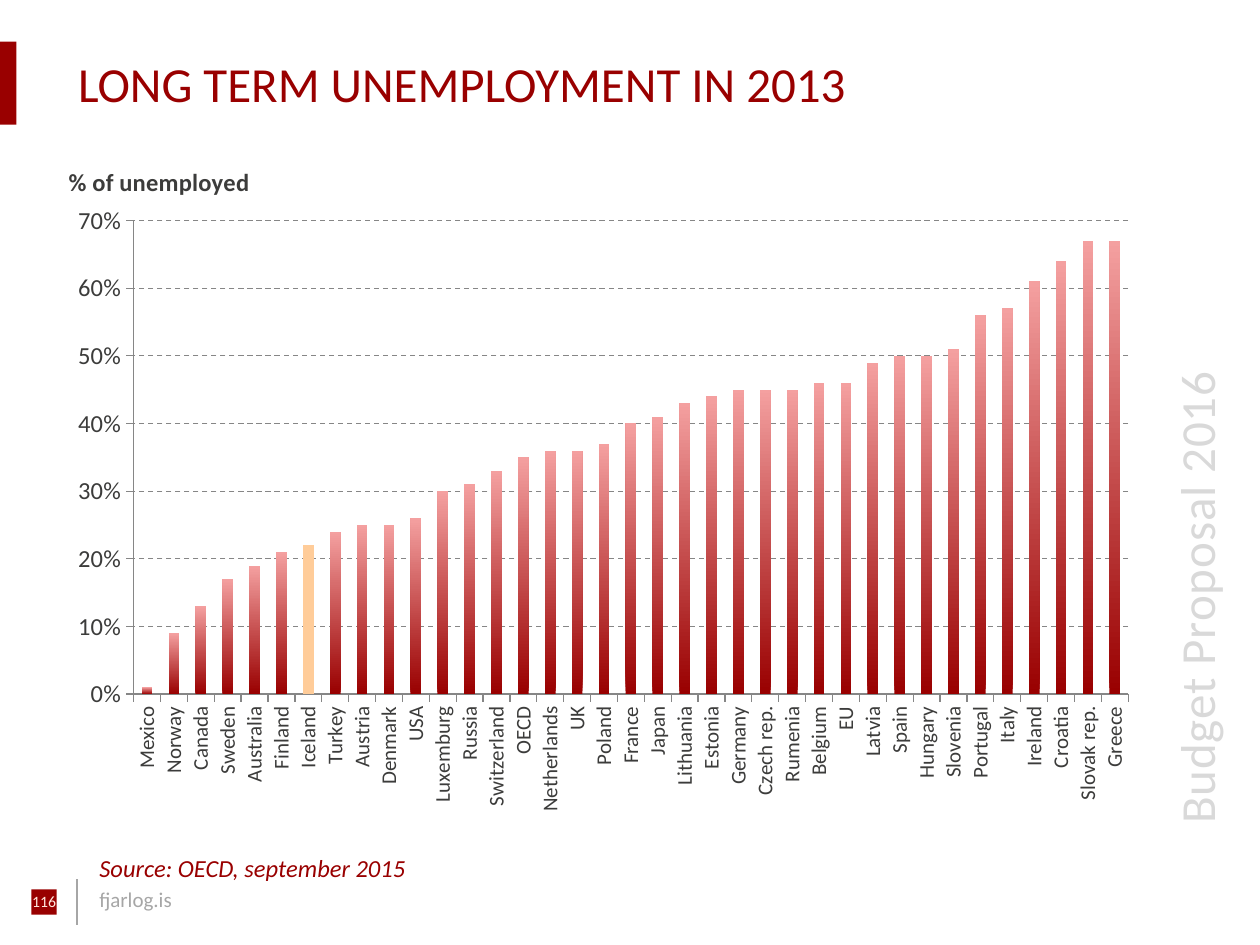
"""Build the long term unemployment slide on a grid of 100 by 75 cells."""
from lxml import etree
from pptx import Presentation
from pptx import util as u
from pptx.chart.data import CategoryChartData
from pptx.dml.color import RGBColor
from pptx.enum import chart as ch, dml, shapes, text
from pptx.oxml.ns import qn

RED, GREY, INK = "990000", "A6A6A6", "3C3C3B"
hue = RGBColor.from_string


def place(node, **vals):
    lay = node.find(qn("c:layout"))
    if lay is None:
        lay = etree.Element(qn("c:layout"))
        node.insert(0, lay)
    man = etree.SubElement(lay, qn("c:manualLayout"))
    for key, val in vals.items():
        etree.SubElement(man, qn("c:" + key)).set("val", str(val))


deck = Presentation()
deck.slide_width, deck.slide_height = u.Inches(10), u.Inches(7.5)
cell = deck.slide_width / 100
page = deck.slides.add_slide(deck.slide_layouts[6])

for spot in [(2.5, 70.6, 2, 2), (0, 3.3, 1.3, 6.6)]:
    bar = page.shapes.add_shape(shapes.MSO_SHAPE.RECTANGLE, *[int(n * cell) for n in spot])
    bar.shadow.inherit = False
    bar.fill.solid()
    bar.fill.fore_color.rgb = hue(RED)
    bar.line.fill.background()

rule = page.shapes.add_connector(
    shapes.MSO_CONNECTOR.STRAIGHT, *[int(n * cell) for n in (6.1, 69.8, 6.1, 73.4)])
rule.line.color.rgb = hue(GREY)
rule.line.width = u.Pt(1)
etree.SubElement(rule._element.spPr, qn("a:effectLst"))

pad = dict(margin_left=u.Inches(0.12), margin_right=u.Inches(0.12),
           margin_top=u.Inches(0.06), margin_bottom=u.Inches(0.06))
mid = dict(pad, vertical_anchor=text.MSO_ANCHOR.MIDDLE)
notes = [
    ("Budget Proposal 2016", (67.8, 36.4, 54.2, 5.7), 28, "D9D9D9", {}),
    ("fjarlog.is", (6.9, 69.9, 18.7, 3), 12, GREY, {}),
    ("LONG TERM UNEMPLOYMENT IN 2013", (5, 3.3, 90.6, 6.6), 28, RED, mid),
    ("116", (0, 70.2, 7, 4.7), 9, "FFE6DC", pad),
    ("Source: OECD, september 2015", (6.9, 67.2, 49.3, 3.4), 14, RED, {}),
]
made = {}
for words, spot, size, tint, form in notes:
    box = page.shapes.add_textbox(*[int(n * cell) for n in spot])
    for key, val in dict(form, word_wrap=True).items():
        setattr(box.text_frame, key, val)
    para = box.text_frame.paragraphs[0]
    run = para.add_run()
    run.text = words
    for key, val in dict(name="Calibri", size=u.Pt(size)).items():
        setattr(run.font, key, val)
    run.font.color.rgb = hue(tint)
    made[words[:6]] = box, para, run
made["Budget"][0].rotation = 270
made["Budget"][2].font._element.set("spc", "50")
made["116"][1].alignment = text.PP_ALIGN.CENTER
made["Source"][2].font.italic = True

rates = {
    "Mexico": 1, "Norway": 9, "Canada": 13, "Sweden": 17, "Australia": 19,
    "Finland": 21, "Iceland": 22, "Turkey": 24, "Austria": 25, "Denmark": 25,
    "USA": 26, "Luxemburg": 30, "Russia": 31, "Switzerland": 33, "OECD": 35,
    "Netherlands": 36, "UK": 36, "Poland": 37, "France": 40, "Japan": 41,
    "Lithuania": 43, "Estonia": 44, "Germany": 45, "Czech rep.": 45,
    "Rumenia": 45, "Belgium": 46, "EU": 46, "Latvia": 49, "Spain": 50,
    "Hungary": 50, "Slovenia": 51, "Portugal": 56, "Italy": 57, "Ireland": 61,
    "Croatia": 64, "Slovak rep.": 67, "Greece": 67,
}
data = CategoryChartData(number_format="0%")
data.categories = list(rates)
data.add_series("Series 1", [rate / 100 for rate in rates.values()])
chart = page.shapes.add_chart(
    ch.XL_CHART_TYPE.COLUMN_CLUSTERED,
    *[int(n * cell) for n in (5.1, 12.2, 86, 54.1)], data).chart
chart.has_legend = chart.has_title = False
for key, val in dict(name="Calibri", size=u.Pt(14)).items():
    setattr(chart.font, key, val)
chart.font.color.rgb = hue(INK)
place(chart._chartSpace.chart.plotArea, layoutTarget="inner", xMode="edge",
      yMode="edge", x=0.064, y=0.098, w=0.918, h=0.695)

plot = chart.plots[0]
plot.gap_width, plot.vary_by_categories = 150, False
bars = plot.series[0]
fill = bars.format.fill
fill.gradient()
fill.gradient_angle = 90
for stop, tint, pos in zip(fill.gradient_stops, (RED, "F4A0A0"), (0, 1)):
    stop.color.rgb = hue(tint)
    stop.position = pos
point = bars.points[list(rates).index("Iceland")].format.fill
point.solid()
point.fore_color.rgb = hue("FFCC99")

cats, vals = chart.category_axis, chart.value_axis
for key, val in dict(minimum_scale=0, maximum_scale=0.7, major_unit=0.1,
                     has_major_gridlines=True, has_title=True).items():
    setattr(vals, key, val)
vals.tick_labels.number_format = "0%"
vals.tick_labels.number_format_is_linked = False
cats.tick_labels.font.size = u.Pt(12)
cats._element.txPr.bodyPr.set("rot", "-5400000")
for axis in (cats, vals):
    axis.major_tick_mark = ch.XL_TICK_MARK.OUTSIDE
for part in (cats, vals, vals.major_gridlines):
    part.format.line.color.rgb = hue("868686")
    part.format.line.width = u.Pt(0.75)
vals.major_gridlines.format.line.dash_style = dml.MSO_LINE.DASH

head = vals.axis_title
frame = head.text_frame
frame.text = "% of unemployed"
frame._txBody.bodyPr.set("rot", "0")
font = frame.paragraphs[0].runs[0].font
for key, val in dict(name="Calibri", size=u.Pt(14), bold=True).items():
    setattr(font, key, val)
font.color.rgb = hue(INK)
place(head._element, xMode="edge", yMode="edge", x=0, y=0.01)

deck.save("out.pptx")
